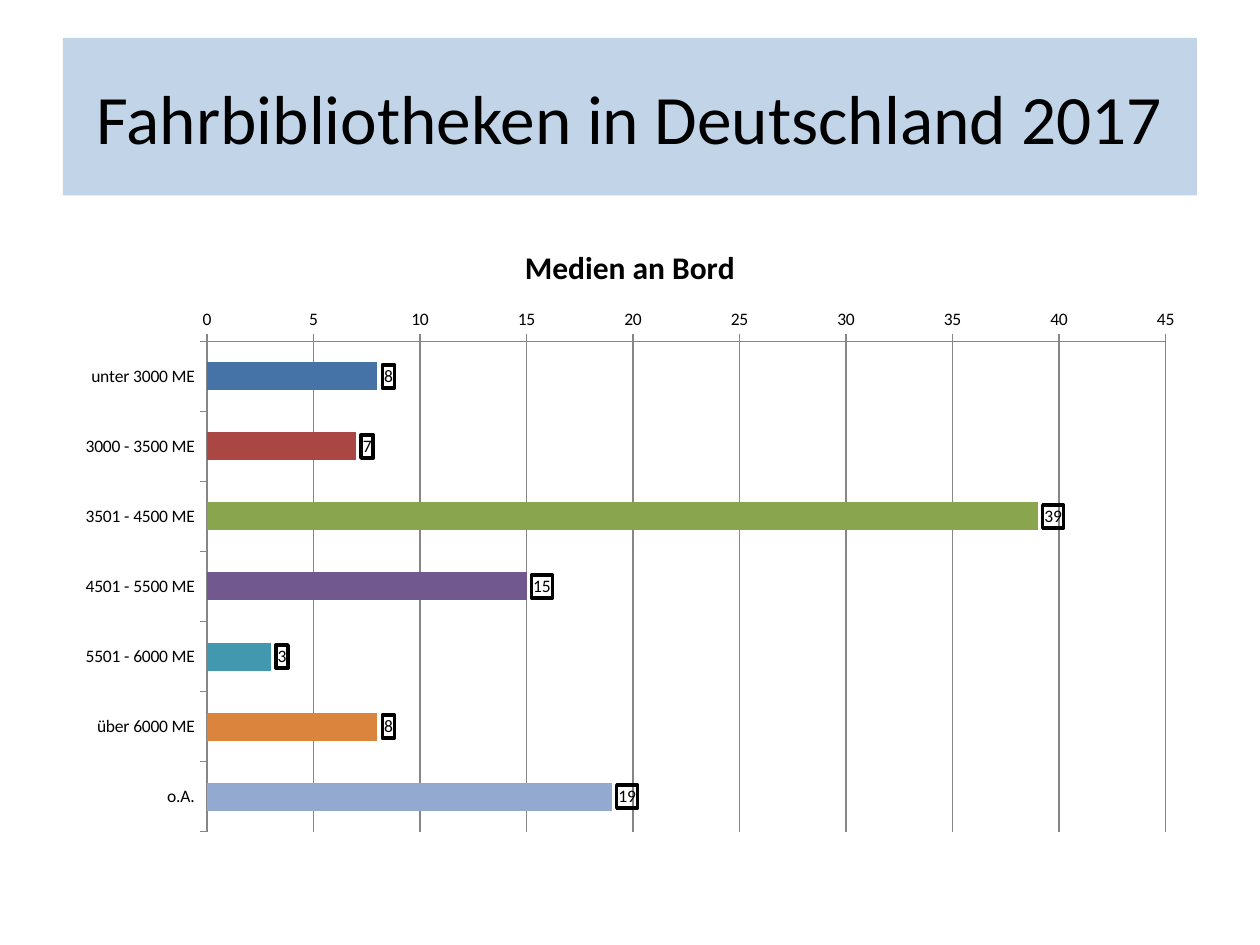
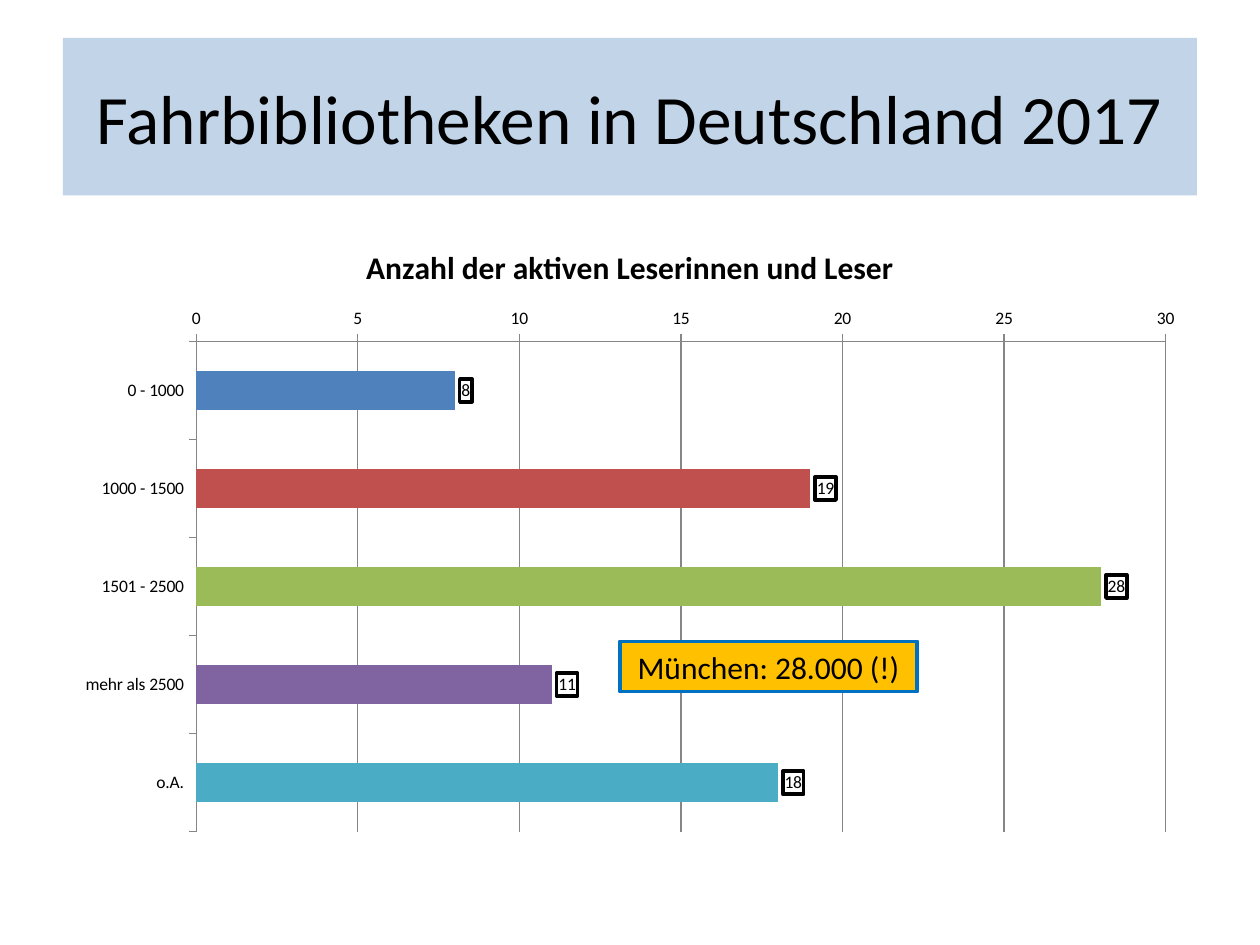
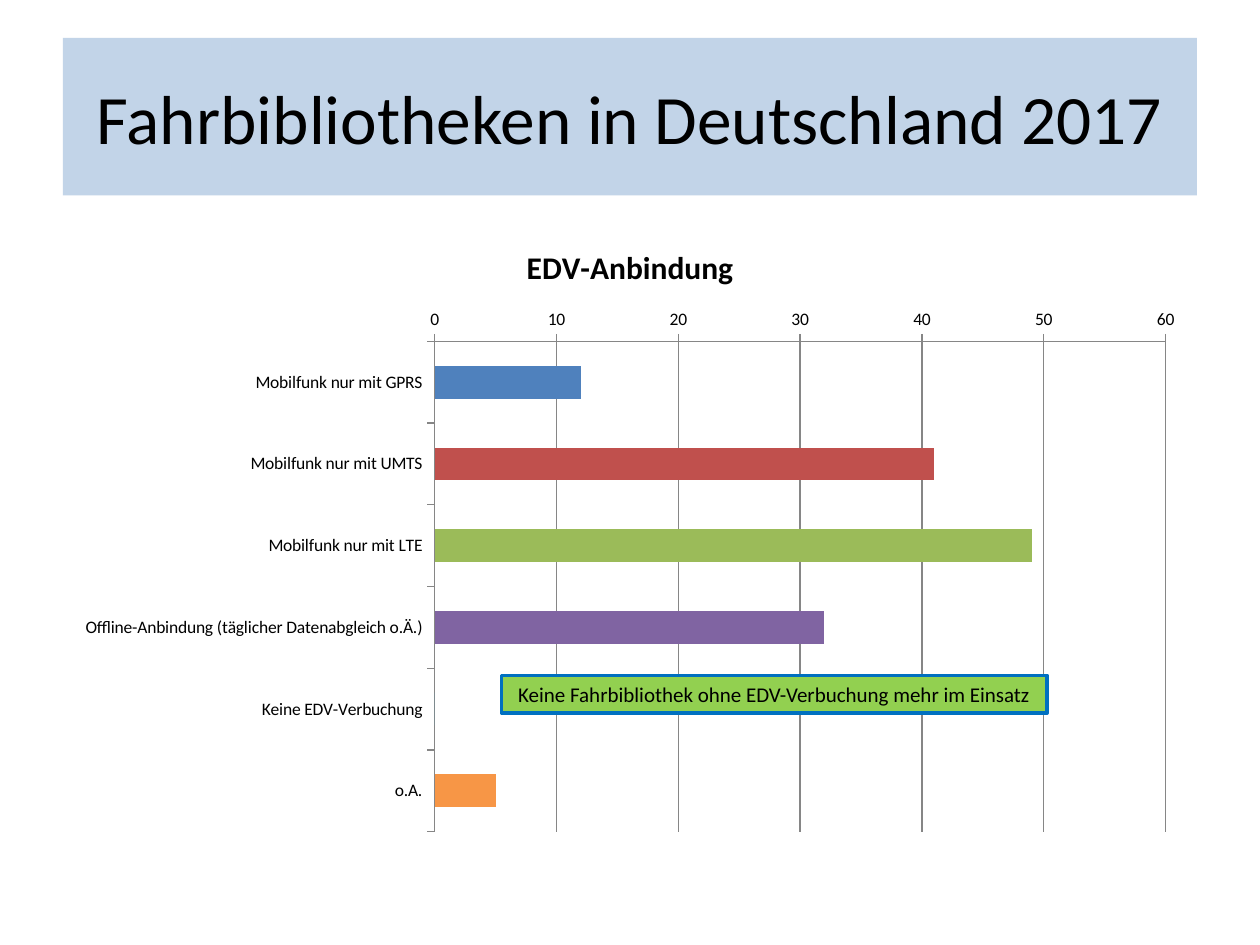
from collections import namedtuple

from lxml.etree import SubElement
from pptx import Presentation
from pptx.chart.data import CategoryChartData
from pptx.dml.color import RGBColor
from pptx.enum.chart import XL_CHART_TYPE, XL_LABEL_POSITION, XL_TICK_MARK
from pptx.enum.shapes import MSO_SHAPE
from pptx.enum.text import MSO_ANCHOR, PP_ALIGN
from pptx.oxml import parse_xml
from pptx.oxml.ns import nsdecls, qn
from pptx.util import Inches, Pt

Box = namedtuple("Box", "left top width height")
Callout = namedtuple("Callout", "text box size fill")

FONT = "Calibri"
TITLE = "Fahrbibliotheken in Deutschland 2017"
BLACK, ACCENT, GRID, CALLOUT_LINE = "000000", "4F81BD", "868686", "0070C0"
BAR_COLORS = [ACCENT, "C0504D", "9BBB59", "8064A2", "4BACC6", "F79646"]
MUTED_BAR_COLORS = ["4572A7", "AA4643", "89A54E", "71588F", "4198AF", "DB843D", "93A9CF"]

SLIDE_WIDTH, SLIDE_HEIGHT = 10, 7.5
MARGIN = 0.05 * SLIDE_WIDTH
CONTENT_WIDTH = SLIDE_WIDTH - 2 * MARGIN
TITLE_BOX = Box(MARGIN, 0.04 * SLIDE_HEIGHT, CONTENT_WIDTH, SLIDE_HEIGHT / 6)
CHART_BOX = Box(MARGIN, 1.75, CONTENT_WIDTH, 0.66 * SLIDE_HEIGHT)


def rgb(color):
    return RGBColor.from_string(color)


def set_font(font, size, bold=False):
    font.name, font.size, font.bold = FONT, Pt(size), bold
    font.color.rgb = rgb(BLACK)


def paint(fill, color):
    fill.solid()
    fill.fore_color.rgb = rgb(color)


def add_panel(slide, box, text, size, fill):
    """Add a borderless filled rectangle with one centred line of text."""
    panel = slide.shapes.add_shape(MSO_SHAPE.RECTANGLE, *map(Inches, box))
    panel.shadow.inherit = False
    paint(panel.fill, fill)
    panel.line.fill.background()
    frame = panel.text_frame
    frame.word_wrap = False
    frame.vertical_anchor = MSO_ANCHOR.MIDDLE
    paragraph = frame.paragraphs[0]
    paragraph.text = text
    paragraph.alignment = PP_ALIGN.CENTER
    set_font(paragraph.font, size)
    return panel


def add_title_band(slide):
    band = add_panel(slide, TITLE_BOX, TITLE, 39.6, ACCENT)
    color = band.fill._xPr.find(qn("a:solidFill"))[0]
    SubElement(color, qn("a:alpha"), val="34000")


def add_callout(slide, callout):
    panel = add_panel(slide, callout.box, callout.text, callout.size, callout.fill)
    paint(panel.line.fill, CALLOUT_LINE)
    panel.line.width = Pt(2)


def add_framed_labels(plot):
    plot.has_data_labels = True
    labels = plot.data_labels
    labels.show_value = True
    labels.position = XL_LABEL_POSITION.OUTSIDE_END
    set_font(labels.font, 10)
    frame = parse_xml(
        f'<c:spPr {nsdecls("c", "a")}><a:ln w="{Pt(2)}"><a:solidFill>'
        f'<a:srgbClr val="{BLACK}"/></a:solidFill></a:ln></c:spPr>')
    labels._element.find(qn("c:txPr")).addprevious(frame)


def style_axis(axis):
    axis.major_tick_mark = XL_TICK_MARK.OUTSIDE
    axis.minor_tick_mark = XL_TICK_MARK.NONE
    paint(axis.format.line.fill, GRID)
    axis.format.line.width = Pt(0.75)


def add_bar_chart(slide, title, values, colors, labelled):
    chart_data = CategoryChartData()
    chart_data.categories = list(values)
    chart_data.add_series("Series 1", list(values.values()))
    chart = slide.shapes.add_chart(
        XL_CHART_TYPE.BAR_CLUSTERED, *map(Inches, CHART_BOX), chart_data).chart
    set_font(chart.font, 10)
    chart.has_legend = False
    chart.has_title = True
    heading = chart.chart_title.text_frame.paragraphs[0]
    heading.text = title
    set_font(heading.font, 18, bold=True)
    chart.chart_title.include_in_layout = False

    style_axis(chart.category_axis)
    chart.category_axis.reverse_order = True
    style_axis(chart.value_axis)
    gridlines = chart.value_axis.major_gridlines.format.line
    paint(gridlines.fill, GRID)
    gridlines.width = Pt(0.75)

    plot = chart.plots[0]
    plot.gap_width = 150
    plot.vary_by_categories = True
    for index, color in enumerate(colors[:len(values)]):
        paint(plot.series[0].points[index].format.fill, color)
    if labelled:
        add_framed_labels(plot)


def add_survey_slide(presentation, title, values, colors=BAR_COLORS, labelled=True, callout=None):
    slide = presentation.slides.add_slide(presentation.slide_layouts[6])
    add_title_band(slide)
    add_bar_chart(slide, title, values, colors, labelled)
    if callout:
        add_callout(slide, callout)


def main():
    presentation = Presentation()
    presentation.slide_width = Inches(SLIDE_WIDTH)
    presentation.slide_height = Inches(SLIDE_HEIGHT)
    add_survey_slide(
        presentation, "Medien an Bord",
        {"unter 3000 ME": 8, "3000 - 3500 ME": 7, "3501 - 4500 ME": 39,
         "4501 - 5500 ME": 15, "5501 - 6000 ME": 3, "über 6000 ME": 8, "o.A.": 19},
        colors=MUTED_BAR_COLORS)
    add_survey_slide(
        presentation, "Anzahl der aktiven Leserinnen und Leser",
        {"0 - 1000": 8, "1000 - 1500": 19, "1501 - 2500": 28, "mehr als 2500": 11, "o.A.": 18},
        callout=Callout("München: 28.000 (!)", Box(4.92, 5.09, 2.36, 0.4), 18, "FFC000"))
    add_survey_slide(
        presentation, "EDV-Anbindung",
        {"Mobilfunk nur mit GPRS": 12, "Mobilfunk nur mit UMTS": 41,
         "Mobilfunk nur mit LTE": 49, "Offline-Anbindung (täglicher Datenabgleich o.Ä.)": 32,
         "Keine EDV-Verbuchung": 0, "o.A.": 5},
        labelled=False,
        callout=Callout("Keine Fahrbibliothek ohne EDV-Verbuchung mehr im Einsatz",
                        Box(3.98, 5.36, 4.33, 0.3), 12, "92D050"))
    presentation.save("out.pptx")


if __name__ == "__main__":
    main()
